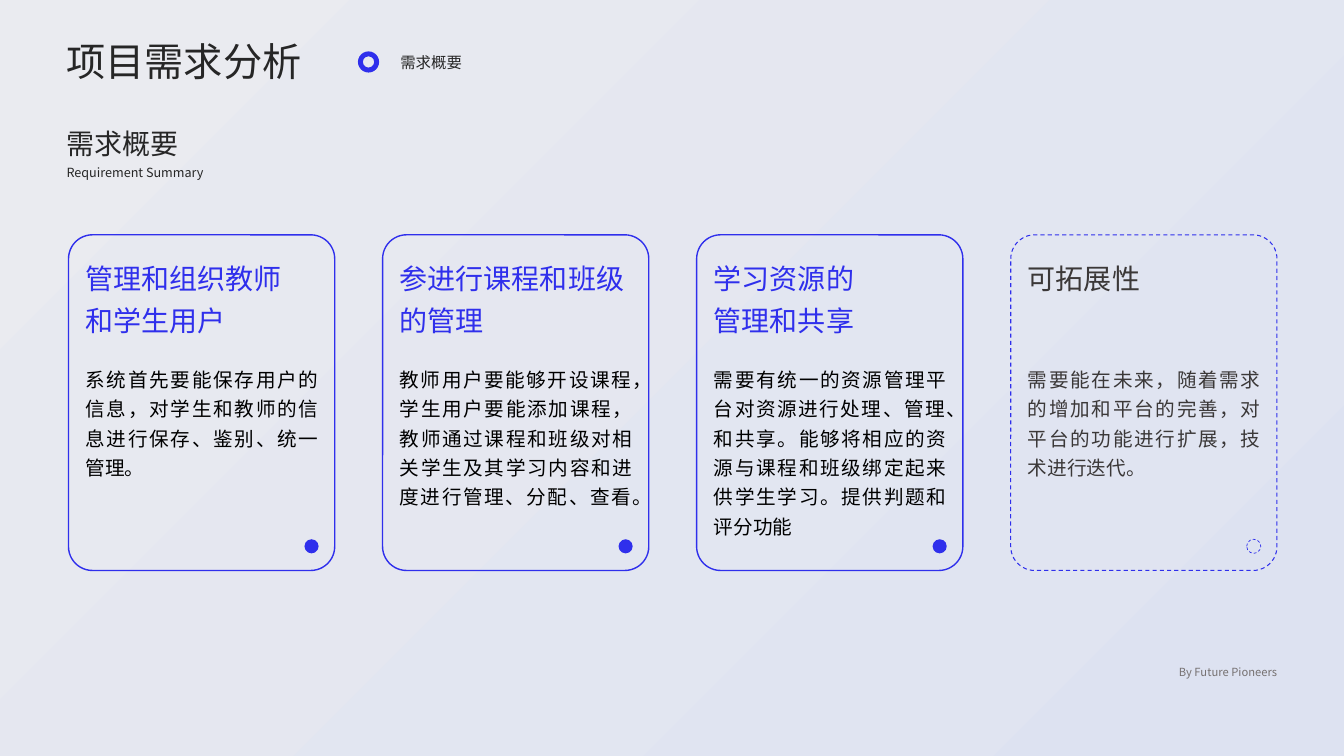
from lxml import etree
from pptx import Presentation
from pptx import util as u
from pptx.dml.color import RGBColor
from pptx.enum import dml, shapes, text
from pptx.oxml.ns import qn

COLOURS = {
    "blue": "2F2FEC",
    "dark": "262626",
    "grey": "3B3838",
    "footer": "767171",
    "black": "000000",
    "light": "EAEBF0",
    "pale": "DDE2F1",
}
CJK = "Noto Sans CJK SC"
LATIN = "Arial"
CARD_LEFT, CARD_TOP, CARD_STEP = 0.68, 2.33, 3.115
CARDS = [
    (["管理和组织教师", "和学生用户"], 1.96, 1.15,
     "系统首先要能保存用户的信息，对学生和教师的信息进行保存、鉴别、统一管理。"),
    (["参进行课程和班级", "的管理"], 2.24, 1.44,
     "教师用户要能够开设课程，学生用户要能添加课程，教师通过课程和班级对相关学生及其学习内容和进度进行管理、分配、查看。"),
    (["学习资源的", "管理和共享"], 1.88, 1.74,
     "需要有统一的资源管理平台对资源进行处理、管理、和共享。能够将相应的资源与课程和班级绑定起来供学生学习。提供判题和评分功能"),
    (["可拓展性"], 1.12, 1.15,
     "需要能在未来，随着需求的增加和平台的完善，对平台的功能进行扩展，技术进行迭代。"),
]


def rgb(name):
    return RGBColor.from_string(COLOURS[name])


def box(left, top, width, height):
    return [u.Inches(value) for value in (left, top, width, height)]


class SlideBuilder:
    def __init__(self, presentation):
        self.slide = presentation.slides.add_slide(presentation.slide_layouts[5])

    def background(self, width, height):
        shape = self.slide.shapes.add_shape(
            shapes.MSO_SHAPE.RECTANGLE, 0, 0, width, height)
        shape.shadow.inherit = False
        shape.line.fill.background()
        shape.fill.gradient()
        shape.fill.gradient_angle = 315
        for stop, name in zip(shape.fill.gradient_stops, ("light", "pale")):
            stop.color.rgb = rgb(name)
        self.slide.shapes._spTree.insert(2, shape._element)

    def set_text(self, shape, lines, size, colour, font=CJK, spacing=None,
                 align=text.PP_ALIGN.LEFT, wrap=False):
        frame = shape.text_frame
        frame.margin_left = frame.margin_top = 0
        frame.margin_right = frame.margin_bottom = 0
        frame.word_wrap = wrap
        frame.auto_size = text.MSO_AUTO_SIZE.SHAPE_TO_FIT_TEXT
        frame.vertical_anchor = text.MSO_ANCHOR.TOP
        frame.text = "\n".join(lines)
        for paragraph in frame.paragraphs:
            paragraph.alignment = align
            if spacing:
                paragraph.line_spacing = spacing
            paragraph.font.size = u.Pt(size)
            paragraph.font.name = font
            paragraph.font.color.rgb = rgb(colour)
            east_asian = etree.SubElement(paragraph.font._element, qn("a:ea"))
            east_asian.set("typeface", CJK)

    def title(self, wording, place, size):
        title = self.slide.shapes.title
        title.left, title.top, title.width, title.height = box(*place)
        self.set_text(title, [wording], size, "dark")

    def label(self, lines, place, size, colour="dark", parent=None, **style):
        parent = parent or self.slide
        self.set_text(parent.shapes.add_textbox(*box(*place)),
                      lines, size, colour, **style)

    def outline(self, kind, place, fill=None, line=None, dashed=False,
                adjust=None, parent=None):
        parent = parent or self.slide
        shape = parent.shapes.add_shape(kind, *box(*place))
        shape.shadow.inherit = False
        if adjust:
            shape.adjustments[0] = adjust
        if fill:
            shape.fill.solid()
            shape.fill.fore_color.rgb = rgb(fill)
        else:
            shape.fill.background()
        if line:
            shape.line.color.rgb = rgb("blue")
            shape.line.width = u.Pt(line)
            if dashed:
                shape.line.dash_style = dml.MSO_LINE.DASH
        else:
            shape.line.fill.background()

    def card(self, left, heading, heading_width, body_height, body, planned):
        group = self.slide.shapes.add_group_shape()
        self.outline(shapes.MSO_SHAPE.ROUNDED_RECTANGLE,
                     (left, CARD_TOP, 2.64, 3.33), line=0.75 if planned else 1,
                     dashed=planned, adjust=0.09, parent=group)
        self.label(heading, (left + 0.17, CARD_TOP + 0.18, heading_width,
                             0.4 * len(heading)), 20,
                   "grey" if planned else "blue", group, spacing=1.25)
        self.label([body], (left + 0.17, CARD_TOP + 1.26, 2.31, body_height), 14,
                   "grey" if planned else "black", group, font=LATIN,
                   spacing=1.25, align=text.PP_ALIGN.JUSTIFY, wrap=True)
        self.outline(shapes.MSO_SHAPE.OVAL,
                     (left + 2.34, CARD_TOP + 3.02, 0.14, 0.14),
                     fill=None if planned else "blue",
                     line=0.5 if planned else None, dashed=planned, parent=group)


def main():
    presentation = Presentation()
    presentation.slide_width = u.Inches(13.33)
    presentation.slide_height = u.Inches(7.5)
    builder = SlideBuilder(presentation)
    builder.background(presentation.slide_width, presentation.slide_height)
    builder.title("项目需求分析", (0.66, 0.37, 2.36, 0.47), 28)
    builder.outline(shapes.MSO_SHAPE.DONUT, (3.55, 0.51, 0.21, 0.21),
                    fill="blue", adjust=0.233)
    builder.label(["需求概要"], (3.97, 0.53, 0.62, 0.19), 11)
    builder.label(["需求概要"], (0.66, 1.26, 1.12, 0.34), 20)
    builder.label(["Requirement Summary"], (0.66, 1.61, 1.38, 0.17), 9, spacing=1.2)
    for index, (heading, heading_width, body_height, body) in enumerate(CARDS):
        builder.card(CARD_LEFT + index * CARD_STEP, heading, heading_width,
                     body_height, body, planned=index == len(CARDS) - 1)
    builder.label(["By Future Pioneers"], (11.67, 6.57, 1, 0.15), 8, "footer",
                  spacing=1.2, align=text.PP_ALIGN.RIGHT)
    presentation.save("out.pptx")


if __name__ == "__main__":
    main()
